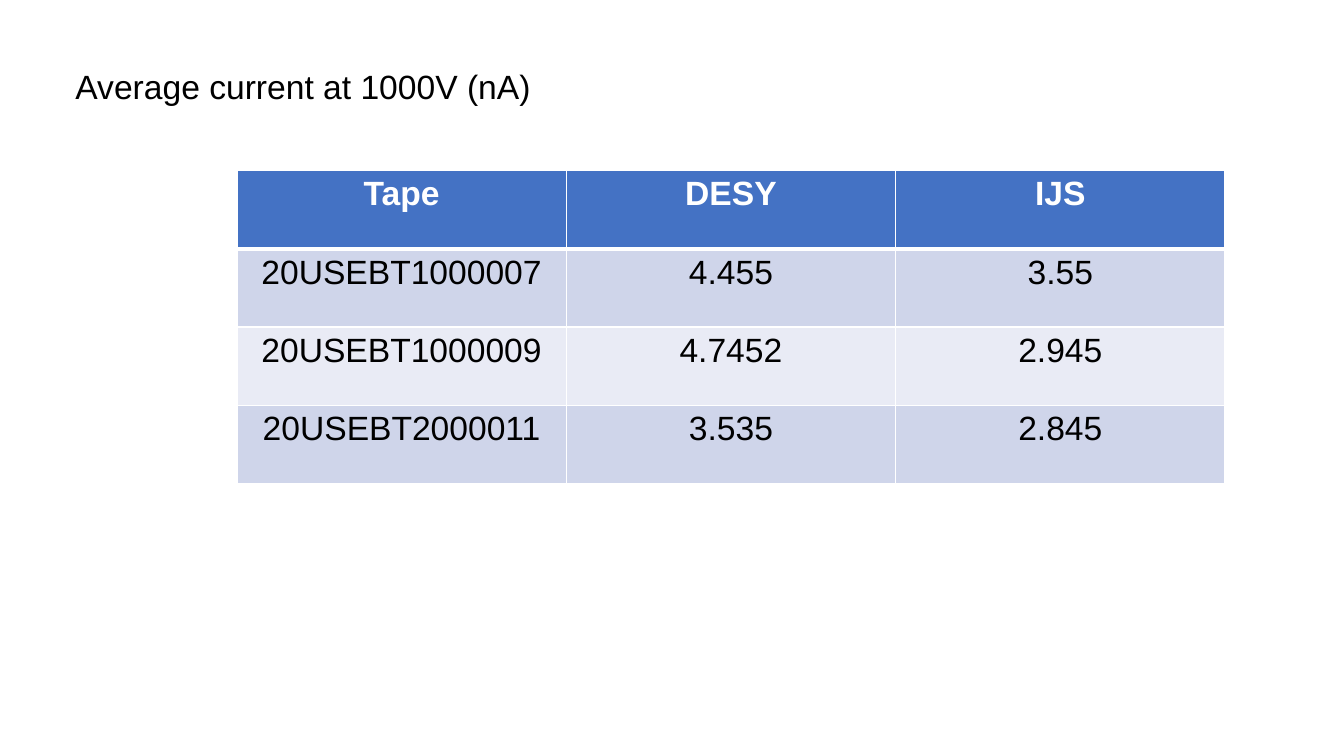
"""Slide with a table of average currents measured at two sites."""
from dataclasses import dataclass

from lxml import etree
from pptx import Presentation
from pptx import util as u
from pptx.dml import color
from pptx.enum import text
from pptx.oxml import ns


@dataclass(frozen=True)
class Theme:
    """Colours, font and type size of the slide."""
    font: str = "Arial"
    size: int = 24
    ink: str = "000000"
    paper: str = "FFFFFF"
    header: str = "4472C4"
    bands: tuple = ("CFD5EA", "E9EBF5")
    rule: int = 1
    header_rule: int = 3


class SlideBuilder:
    """Holds the theme and the current slide and adds elements to it."""

    def __init__(self, prs, theme):
        """Add a blank slide to the presentation."""
        self.theme = theme
        self.s = prs.slides.add_slide(prs.slide_layouts[6])

    def add_line(self, tf, wording, ink, bold=False, align=text.PP_ALIGN.LEFT):
        """Put one formatted paragraph into a text frame."""
        p = tf.paragraphs[0]
        p.alignment = align
        r = p.add_run()
        r.text = wording
        font = {"name": self.theme.font, "size": u.Pt(self.theme.size), "bold": bold}
        for key, value in font.items():
            setattr(r.font, key, value)
        r.font.color.rgb = color.RGBColor.from_string(ink)

    def text_box(self, wording, left, top, width, height):
        """Add a wrapping text box that grows with its text."""
        sp = self.s.shapes.add_textbox(*map(u.Inches, (left, top, width, height)))
        tf = sp.text_frame
        frame = {"word_wrap": True, "auto_size": text.MSO_AUTO_SIZE.SHAPE_TO_FIT_TEXT}
        for key, value in frame.items():
            setattr(tf, key, value)
        self.add_line(tf, wording, self.theme.ink)

    def borders(self, cell, top, bottom):
        """Draw the four borders of a cell in the paper colour."""
        tc_pr = cell._tc.get_or_add_tcPr()
        widths = {"L": self.theme.rule, "R": self.theme.rule, "T": top, "B": bottom}
        for side, width in widths.items():
            ln = etree.SubElement(tc_pr, ns.qn(f"a:ln{side}"), w=str(u.Pt(width)))
            fill = etree.SubElement(ln, ns.qn("a:solidFill"))
            etree.SubElement(fill, ns.qn("a:srgbClr"), val=self.theme.paper)

    def table(self, rows, left, top, width, height):
        """Add a table with a header row, banded rows and equal cells."""
        theme = self.theme
        box = map(u.Inches, (left, top, width, height))
        table = self.s.shapes.add_table(len(rows), len(rows[0]), *box).table
        for i, row in enumerate(rows):
            head = i == 0
            fill = theme.header if head else theme.bands[(i - 1) % 2]
            for j, wording in enumerate(row):
                cell = table.cell(i, j)
                self.borders(cell,
                             theme.header_rule if i == 1 else theme.rule,
                             theme.header_rule if head else theme.rule)
                cell.fill.solid()
                cell.fill.fore_color.rgb = color.RGBColor.from_string(fill)
                self.add_line(cell.text_frame, wording,
                              theme.paper if head else theme.ink,
                              head, text.PP_ALIGN.CENTER)


def main():
    """Build and save the slide."""
    prs = Presentation()
    prs.slide_width, prs.slide_height = u.Inches(13.33), u.Inches(7.5)
    slide = SlideBuilder(prs, Theme())
    currents = [
        ("Tape", "DESY", "IJS"),
        ("20USEBT1000007", "4.455", "3.55"),
        ("20USEBT1000009", "4.7452", "2.945"),
        ("20USEBT2000011", "3.535", "2.845"),
    ]
    slide.table(currents, 2.35, 1.69, 9.8, 3.11)
    slide.text_box("Average current at 1000V (nA)", 0.65, 0.6, 6.56, 0.5)
    prs.save("out.pptx")


if __name__ == "__main__":
    main()
